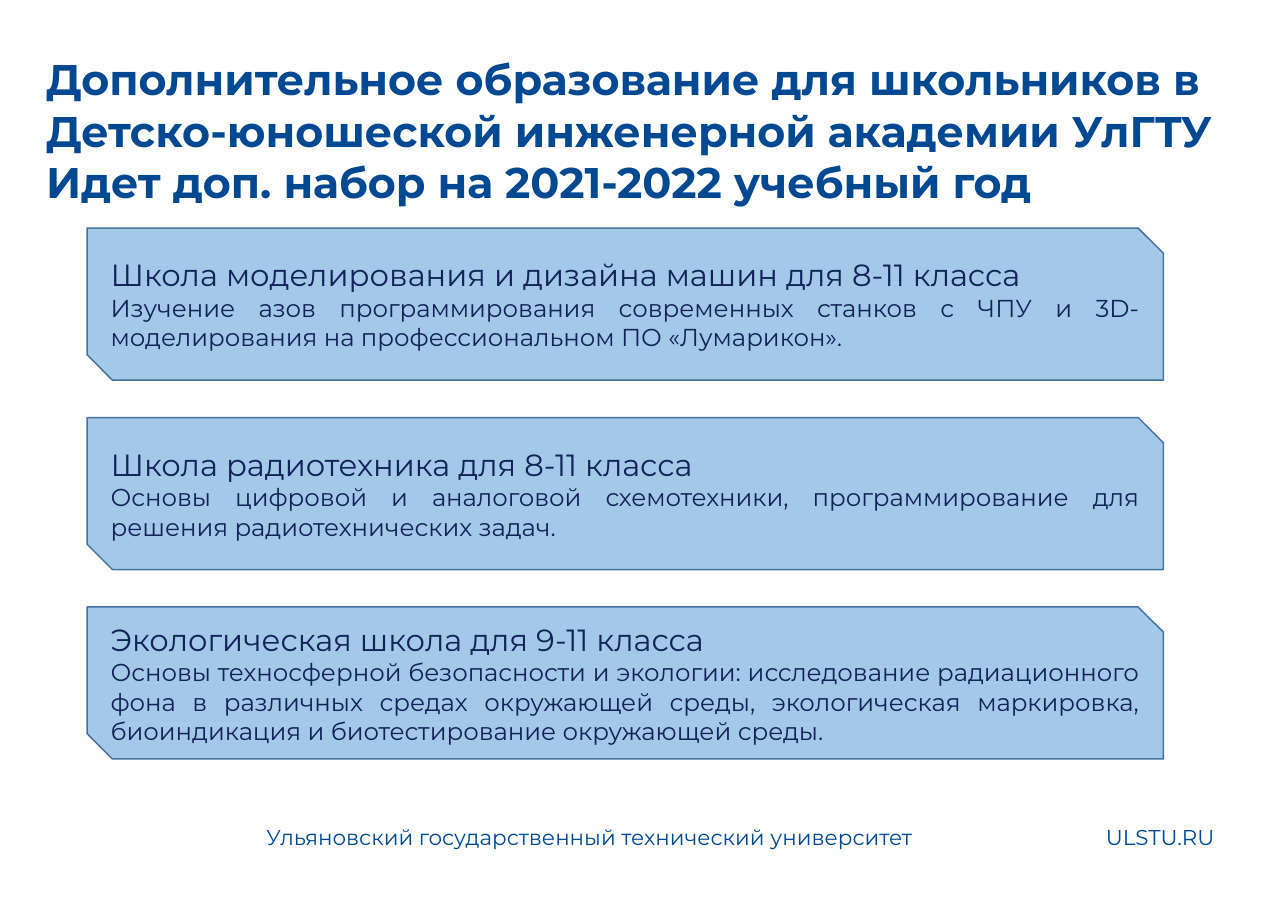
from lxml import etree
from pptx import Presentation, util as u
from pptx.dml.color import RGBColor
from pptx.enum import shapes, text
from pptx.oxml.ns import qn

FONT = "Montserrat"
BLUE = RGBColor(0x00, 0x48, 0x92)
NAVY = RGBColor(0x12, 0x22, 0x5A)
CARD_FILL = RGBColor(0x5B, 0x9B, 0xD5)
CARD_LINE = RGBColor(0x43, 0x73, 0x9E)

presentation = Presentation()
presentation.slide_width = u.Inches(11.69)
presentation.slide_height = u.Inches(8.27)
slide = presentation.slides.add_slide(presentation.slide_layouts[6])


def style(paragraph, size, color, bold=False, align=text.PP_ALIGN.LEFT):
    paragraph.alignment = align
    for run in paragraph.runs:
        run.font.name = FONT
        run.font.size = u.Pt(size)
        run.font.bold = bold
        run.font.color.rgb = color


def add_label(box, wording, size, bold=False):
    label = slide.shapes.add_textbox(*[u.Inches(length) for length in box])
    label.text_frame.word_wrap = True
    label.text_frame.text = wording
    for paragraph in label.text_frame.paragraphs:
        style(paragraph, size, BLUE, bold)


# Title
add_label(
    (0.32, 0.43, 11.16, 2.51),
    "Дополнительное образование для школьников в Детско-юношеской инженерной академии УлГТУ\n"
    "Идет доп. набор на 2021-2022 учебный год",
    28, bold=True)

# Footer: university and site on one row
FOOTER_TOP, FOOTER_HEIGHT = 7.43, 0.39
for left, width, wording in (
        (2.32, 6.2, "Ульяновский государственный технический университет"),
        (9.94, 1.4, "ULSTU.RU")):
    add_label((left, FOOTER_TOP, width, FOOTER_HEIGHT), wording, 14)

# School cards: one column, equal steps
CARD_LEFT, CARD_TOP, CARD_WIDTH, CARD_HEIGHT = 0.79, 2.07, 9.77, 1.38
CARD_STEP = 1.72
schools = (
    ("Школа моделирования и дизайна машин для 8-11 класса",
     "Изучение азов программирования современных станков с ЧПУ и 3D-моделирования "
     "на профессиональном ПО «Лумарикон»."),
    ("Школа радиотехника для 8-11 класса",
     "Основы цифровой и аналоговой схемотехники, программирование для решения "
     "радиотехнических задач."),
    ("Экологическая школа для 9-11 класса",
     "Основы техносферной безопасности и экологии: исследование радиационного фона "
     "в различных средах окружающей среды, экологическая маркировка, биоиндикация "
     "и биотестирование окружающей среды."),
)
for row, (school, description) in enumerate(schools):
    card = slide.shapes.add_shape(
        shapes.MSO_SHAPE.SNIP_2_DIAG_RECTANGLE,
        u.Inches(CARD_LEFT), u.Inches(CARD_TOP + row * CARD_STEP),
        u.Inches(CARD_WIDTH), u.Inches(CARD_HEIGHT))
    card.shadow.inherit = False
    card.fill.solid()
    card.fill.fore_color.rgb = CARD_FILL
    card.line.color.rgb = CARD_LINE
    card.line.width = u.Pt(1)

    # Fill opacity of 55 %
    fill_color = card.fill._xPr.find(qn("a:solidFill"))[0]
    etree.SubElement(fill_color, qn("a:alpha")).set("val", "55000")

    frame = card.text_frame
    frame.word_wrap = True
    frame.vertical_anchor = text.MSO_ANCHOR.MIDDLE
    frame.text = f"{school}\n{description}"
    heading, details = frame.paragraphs
    style(heading, 20, NAVY)
    style(details, 16, NAVY, align=text.PP_ALIGN.JUSTIFY)

presentation.save("out.pptx")
